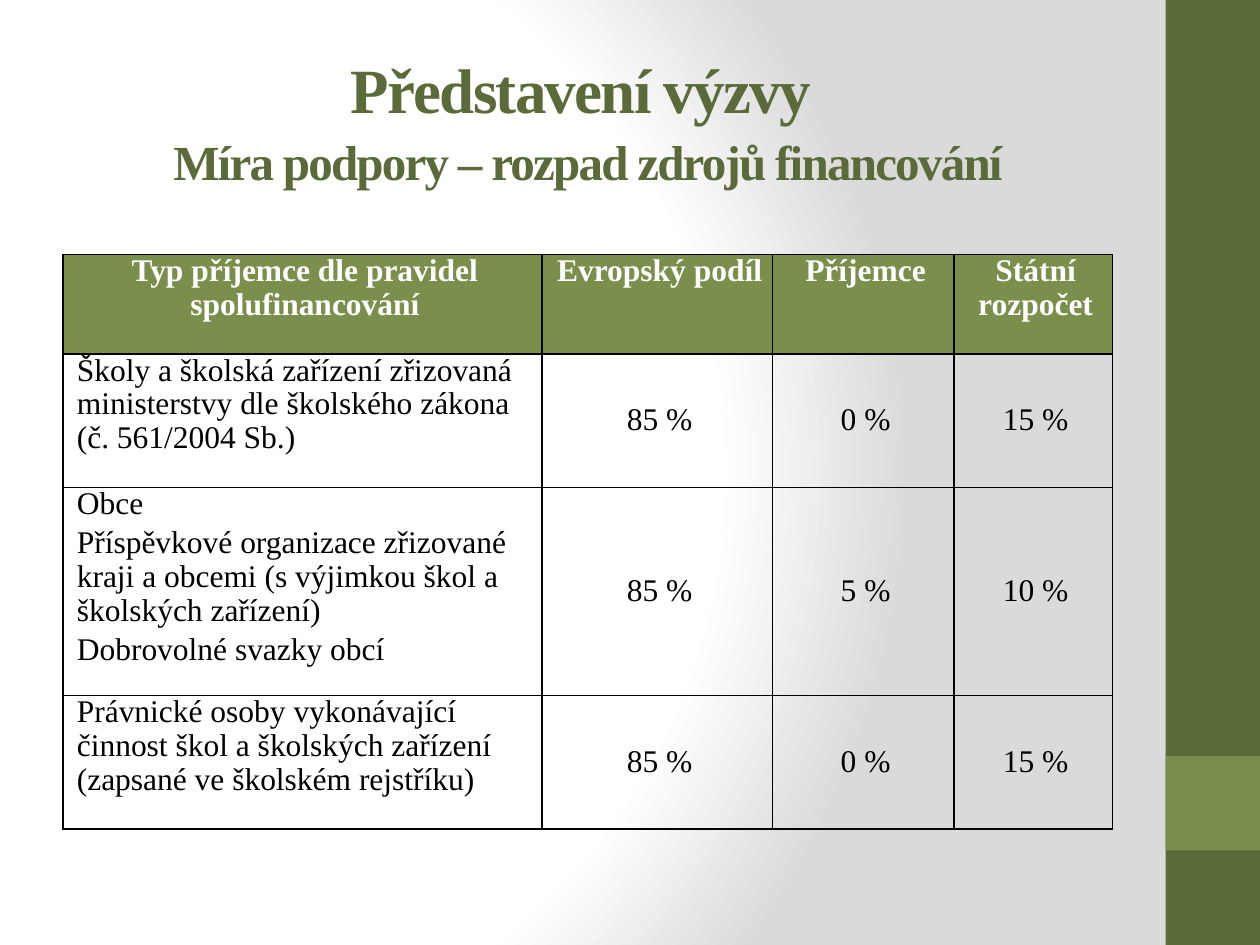
from dataclasses import dataclass

from lxml.etree import SubElement
from pptx import Presentation
from pptx.dml.color import RGBColor
from pptx.enum.shapes import MSO_SHAPE
from pptx.enum.text import MSO_ANCHOR, PP_ALIGN
from pptx.oxml import parse_xml
from pptx.oxml.ns import nsdecls, qn
from pptx.util import Emu, Pt

PX = 9144


@dataclass(frozen=True)
class Theme:
    font: str = "Times New Roman"
    dark: str = "5A6A39"
    band: str = "798E4C"
    header: str = "7A8F4C"
    white: str = "FFFFFF"
    black: str = "000000"
    grey: str = "DADADA"
    title: int = 36
    subtitle: int = 28
    body: int = 18
    border: int = 1


def px(*values):
    return [Emu(v * PX) for v in values]


def apply(obj, **values):
    for name, value in values.items():
        setattr(obj, name, value)


class Deck:
    """Draws styled elements on the current slide."""

    def __init__(self, prs, theme):
        self.t = theme
        self.s = prs.slides.add_slide(prs.slide_layouts[6])

    def background(self, stops, focus):
        fill = self.s.background.fill
        fill.gradient()
        grad = next(self.s.element.iter(qn("a:gradFill")))
        for child in list(grad):
            grad.remove(child)
        gs_lst = SubElement(grad, qn("a:gsLst"))
        for pos, color in stops:
            gs = SubElement(gs_lst, qn("a:gs"), pos=str(pos * 1000))
            SubElement(gs, qn("a:srgbClr"), val=color)
        circle = SubElement(grad, qn("a:path"), {"path": "circle"})
        sides = {side: str(v * 1000) for side, v in zip("ltrb", focus)}
        SubElement(circle, qn("a:fillToRect"), sides)

    def rect(self, box, color):
        sp = self.s.shapes.add_shape(MSO_SHAPE.RECTANGLE, *px(*box))
        sp.shadow.inherit = False
        sp.fill.solid()
        sp.fill.fore_color.rgb = RGBColor.from_string(color)
        sp.line.fill.background()

    def run(self, p, text, size, color, bold):
        r = p.add_run()
        r.text = text
        apply(r.font, name=self.t.font, size=Pt(size), bold=bold)
        r.font.color.rgb = RGBColor.from_string(color)
        return r

    def title(self, box, lines):
        tf = self.s.shapes.add_textbox(*px(*box)).text_frame
        apply(tf, word_wrap=True, vertical_anchor=MSO_ANCHOR.MIDDLE)
        p = tf.paragraphs[0]
        apply(p, alignment=PP_ALIGN.CENTER, line_spacing=1.1)
        for i, (text, size) in enumerate(lines):
            if i:
                p.add_line_break()
            r = self.run(p, text, size, self.t.dark, True)
            r.font._element.set("spc", "-100")

    def cell(self, cell, text, header, centered):
        margins = dict(zip(("margin_left", "margin_top", "margin_right", "margin_bottom"),
                           px(7, 0, 7, 0)))
        middle = centered and not header
        apply(cell, vertical_anchor=MSO_ANCHOR.MIDDLE if middle else MSO_ANCHOR.TOP, **margins)
        tc_pr = cell._tc.get_or_add_tcPr()
        for side in "LRTB":
            tc_pr.append(parse_xml(
                f'<a:ln{side} {nsdecls("a")} w="{Pt(self.t.border)}"><a:solidFill>'
                f'<a:srgbClr val="{self.t.black}"/></a:solidFill></a:ln{side}>'))
        if header:
            cell.fill.solid()
            cell.fill.fore_color.rgb = RGBColor.from_string(self.t.header)
        else:
            cell.fill.background()
        tf = cell.text_frame
        for i, line in enumerate(text.split("\n")):
            p = tf.add_paragraph() if i else tf.paragraphs[0]
            apply(p, alignment=PP_ALIGN.CENTER if centered else PP_ALIGN.LEFT,
                  space_before=Pt(3), line_spacing=0.97)
            p._p.get_or_add_pPr().set("marL", str(4 * PX))
            self.run(p, line, self.t.body, self.t.white if header else self.t.black, header)

    def table(self, left, top, widths, heights, rows):
        box = px(left, top, sum(widths), sum(heights))
        tbl = self.s.shapes.add_table(len(rows), len(widths), *box).table
        apply(tbl, first_row=False, horz_banding=False)
        for col, width in zip(tbl.columns, px(*widths)):
            col.width = width
        for row, height in zip(tbl.rows, px(*heights)):
            row.height = height
        for i, row in enumerate(rows):
            for j, text in enumerate(row):
                self.cell(tbl.cell(i, j), text, i == 0, i == 0 or j > 0)


def main():
    prs = Presentation()
    prs.slide_width, prs.slide_height = px(1000, 750)
    t = Theme()
    deck = Deck(prs, t)
    deck.background([(0, t.white), (75, t.white), (100, t.grey)], (20, 50, 100, 50))
    deck.rect((925, 0, 75, 750), t.dark)
    deck.rect((925, 600, 75, 75), t.band)
    deck.title((50, 30, 833, 125), [
        ("Představení výzvy ", t.title),
        ("Míra podpory – rozpad zdrojů financování", t.subtitle),
    ])
    deck.table(50, 202, (380, 183, 144, 126), (79, 106, 165, 106), [
        ("Typ příjemce dle pravidel spolufinancování", "Evropský podíl",
         "Příjemce", "Státní rozpočet"),
        ("Školy a školská zařízení zřizovaná ministerstvy dle školského zákona "
         "(č. 561/2004 Sb.)", "85 %", "0 %", "15 %"),
        ("Obce\nPříspěvkové organizace zřizované kraji a obcemi "
         "(s výjimkou škol a školských zařízení)\nDobrovolné svazky obcí",
         "85 %", "5 %", "10 %"),
        ("Právnické osoby vykonávající činnost škol a školských zařízení "
         "(zapsané ve školském rejstříku)", "85 %", "0 %", "15 %"),
    ])
    prs.save("out.pptx")


if __name__ == "__main__":
    main()
